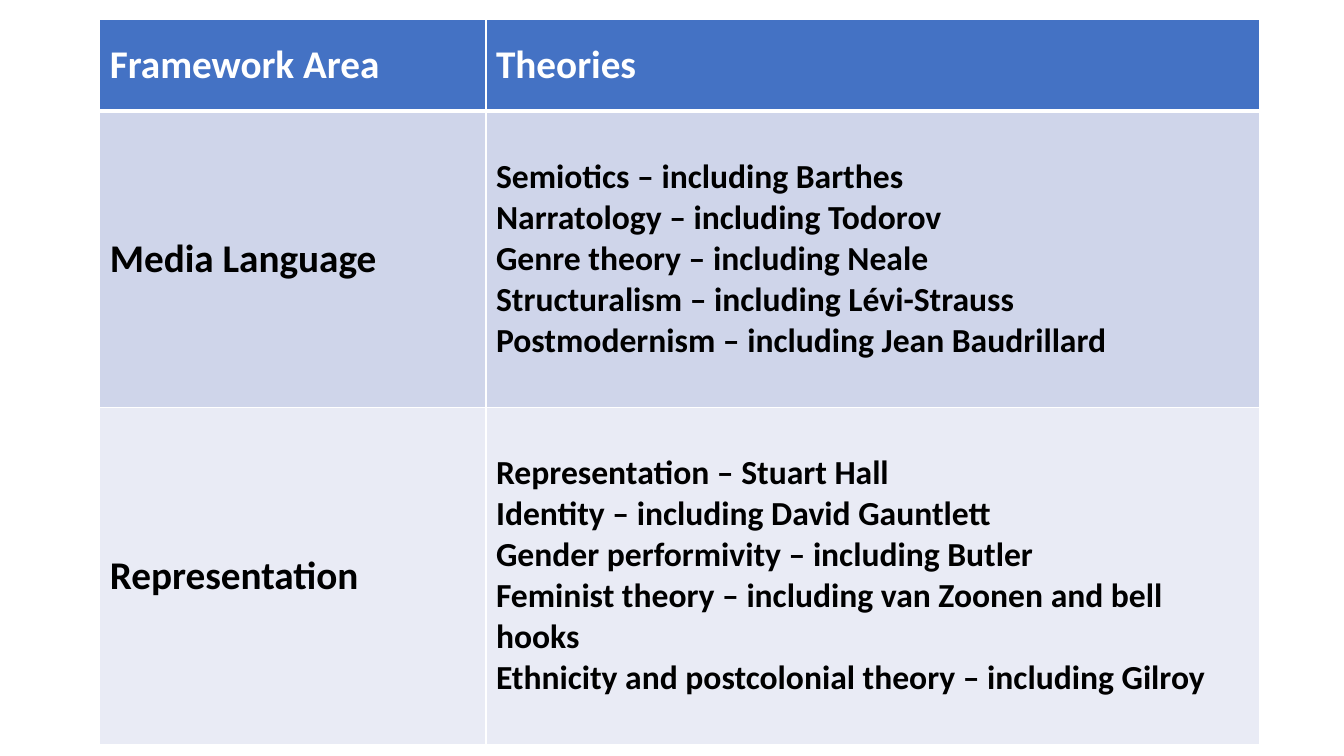
from dataclasses import dataclass

from lxml.etree import SubElement
from pptx import Presentation
from pptx.dml.color import RGBColor
from pptx.enum.text import MSO_ANCHOR
from pptx.oxml.ns import qn
from pptx.table import _Cell as Cell
from pptx.util import Inches, Pt

WHITE = RGBColor(0xFF, 0xFF, 0xFF)
BLACK = RGBColor(0x00, 0x00, 0x00)
HEADER_BLUE = RGBColor(0x44, 0x72, 0xC4)
BAND_DARK = RGBColor(0xCF, 0xD5, 0xEA)
BAND_LIGHT = RGBColor(0xE9, 0xEB, 0xF5)

FONT = "Calibri"
AREA_SIZE = 28
THEORY_SIZE = 24
THIN = 1
THICK = 3
COLUMN_WIDTHS = (3.83, 7.67)


@dataclass(frozen=True)
class FrameworkRow:
    area: str
    theories: tuple[str, ...]
    height: float
    fill: RGBColor
    color: RGBColor = BLACK
    theory_size: int = THEORY_SIZE
    top_border: int = THIN
    bottom_border: int = THIN


ROWS = (
    FrameworkRow(
        "Framework Area", ("Theories",), 0.91, HEADER_BLUE,
        color=WHITE, theory_size=AREA_SIZE, bottom_border=THICK,
    ),
    FrameworkRow(
        "Media Language",
        (
            "Semiotics – including Barthes",
            "Narratology – including Todorov",
            "Genre theory – including Neale",
            "Structuralism – including Lévi-Strauss",
            "Postmodernism – including Jean Baudrillard",
        ),
        2.94, BAND_DARK, top_border=THICK,
    ),
    FrameworkRow(
        "Representation",
        (
            "Representation – Stuart Hall\nIdentity – including David Gauntlett",
            "Gender performivity – including Butler",
            "Feminist theory – including van Zoonen and bell hooks",
            "Ethnicity and postcolonial theory – including Gilroy",
        ),
        3.35, BAND_LIGHT,
    ),
)


def add_borders(cell: Cell, row: FrameworkRow) -> None:
    properties = cell._tc.get_or_add_tcPr()
    widths = {"L": THIN, "R": THIN, "T": row.top_border, "B": row.bottom_border}
    for side, width in widths.items():
        line = SubElement(properties, qn(f"a:ln{side}"), w=str(Pt(width)))
        fill = SubElement(line, qn("a:solidFill"))
        SubElement(fill, qn("a:srgbClr"), val=str(WHITE))


def write_cell(cell: Cell, lines: tuple[str, ...], size: int, row: FrameworkRow) -> None:
    add_borders(cell, row)
    cell.fill.solid()
    cell.fill.fore_color.rgb = row.fill
    cell.vertical_anchor = MSO_ANCHOR.MIDDLE
    frame = cell.text_frame
    for index, line in enumerate(lines):
        para = frame.add_paragraph() if index else frame.paragraphs[0]
        for part_index, part in enumerate(line.split("\n")):
            if part_index:
                para.add_line_break()
            span = para.add_run()
            span.text = part
            span.font.name = FONT
            span.font.size = Pt(size)
            span.font.bold = True
            span.font.color.rgb = row.color


def main() -> None:
    deck = Presentation()
    deck.slide_width = Inches(13.33)
    deck.slide_height = Inches(7.5)
    page = deck.slides.add_slide(deck.slide_layouts[6])
    table = page.shapes.add_table(
        len(ROWS), len(COLUMN_WIDTHS), Inches(0.99), Inches(0.19),
        Inches(sum(COLUMN_WIDTHS)), Inches(sum(row.height for row in ROWS)),
    ).table
    for column, width in zip(table.columns, COLUMN_WIDTHS):
        column.width = Inches(width)
    for index, row in enumerate(ROWS):
        table.rows[index].height = Inches(row.height)
        write_cell(table.cell(index, 0), (row.area,), AREA_SIZE, row)
        write_cell(table.cell(index, 1), row.theories, row.theory_size, row)
    deck.save("out.pptx")


if __name__ == "__main__":
    main()
